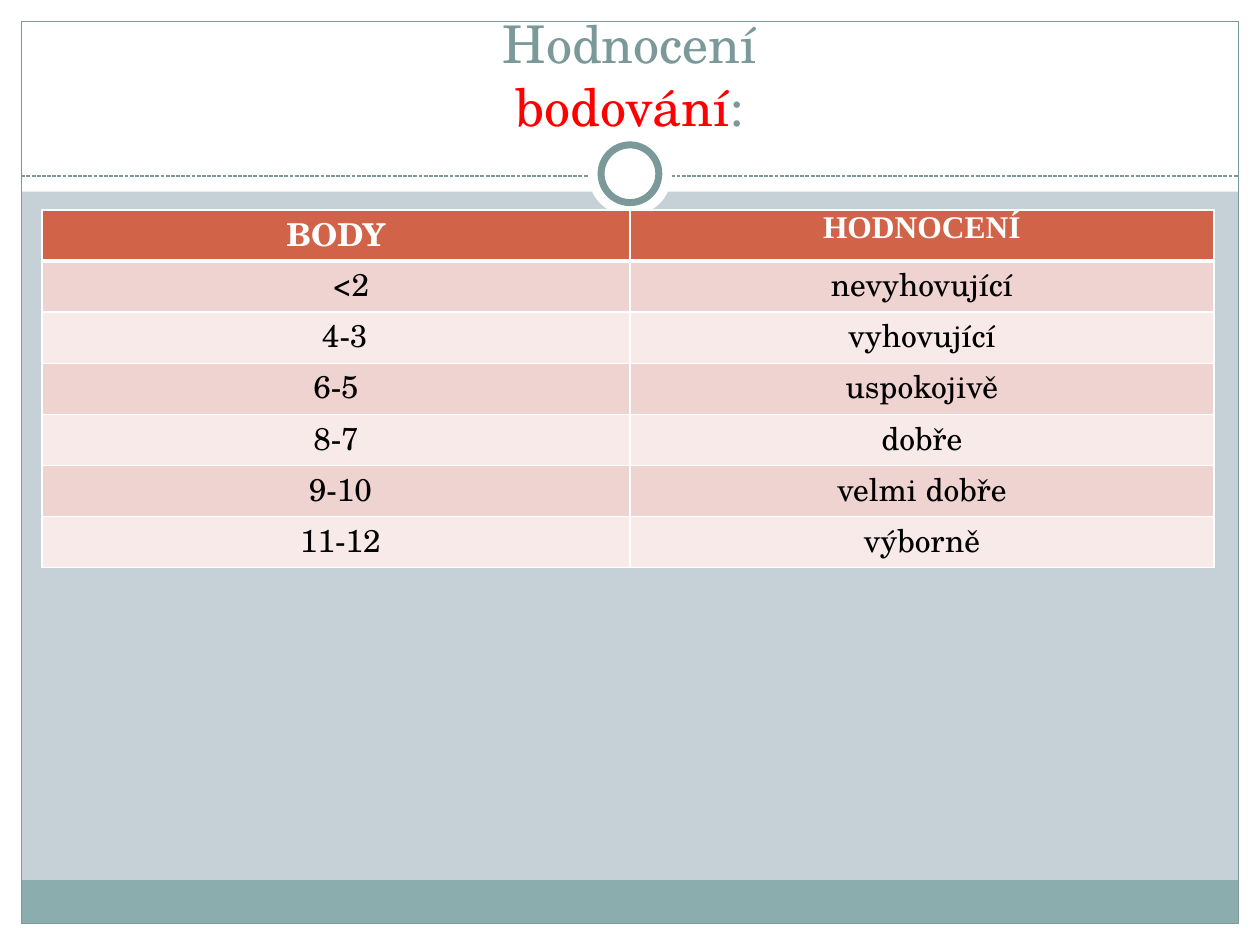
from lxml import etree
from pptx import Presentation, util as u
from pptx.dml.color import RGBColor
from pptx.enum import dml, shapes, text
from pptx.oxml import ns

Pt = u.Pt
WHITE = RGBColor(0xFF, 0xFF, 0xFF)
BLACK = RGBColor(0, 0, 0)
RED = RGBColor(0xFF, 0, 0)
SLATE = RGBColor(0x7C, 0x99, 0x9A)
TEAL = RGBColor(0x8C, 0xAD, 0xAE)
BACKGROUND = RGBColor(0xC5, 0xD1, 0xD7)
HEADER = RGBColor(0xD1, 0x63, 0x49)
BANDS = RGBColor(0xEE, 0xD3, 0xD0), RGBColor(0xF7, 0xEA, 0xE9)

WIDTH, HEIGHT = 720, 540
MARGIN = 12.2
SERIF, TIMES = "TeX Gyre Schola", "Times New Roman"

# Points, grade and extra left indent of the points
GRADES = [
    ("<2", "nevyhovující", 17),
    ("4-3", "vyhovující", 10),
    ("6-5", "uspokojivě", 0),
    ("8-7", "dobře", 0),
    ("9-10", "velmi dobře", 5),
    ("11-12", "výborně", 5),
]


class SlideBuilder:
    def __init__(self, slide):
        self.slide = slide
        background = slide.background.fill
        background.solid()
        background.fore_color.rgb = BACKGROUND

    def shape(self, kind, left, top, width, height, fill=None, line=None, weight=0.75):
        shape = self.slide.shapes.add_shape(
            kind, Pt(left), Pt(top), Pt(width), Pt(height))
        shape.shadow.inherit = False
        if fill is None:
            shape.fill.background()
        else:
            shape.fill.solid()
            shape.fill.fore_color.rgb = fill
        if line is None:
            shape.line.fill.background()
        else:
            shape.line.color.rgb = line
            shape.line.width = Pt(weight)

    def rectangle(self, *box, **style):
        self.shape(shapes.MSO_SHAPE.RECTANGLE, *box, **style)

    def circle(self, center_x, center_y, diameter, **style):
        self.shape(shapes.MSO_SHAPE.OVAL, center_x - diameter / 2,
                   center_y - diameter / 2, diameter, diameter, **style)

    def dashed_line(self, left, right, y):
        line = self.slide.shapes.add_connector(
            shapes.MSO_CONNECTOR.STRAIGHT, Pt(left), Pt(y), Pt(right), Pt(y))
        line.line.color.rgb = SLATE
        line.line.width = Pt(0.75)
        line.line.dash_style = dml.MSO_LINE.SQUARE_DOT
        properties = line.element.find(ns.qn("p:spPr"))
        etree.SubElement(properties, ns.qn("a:effectLst"))

    def title(self, left, top, width, height, lines):
        title = self.slide.shapes.title
        self.slide.shapes.element.append(title.element)  # bring to front
        title.left, title.top = Pt(left), Pt(top)
        title.width, title.height = Pt(width), Pt(height)
        frame = title.text_frame
        frame.word_wrap = True
        frame.auto_size = text.MSO_AUTO_SIZE.NONE
        frame.vertical_anchor = text.MSO_ANCHOR.BOTTOM
        frame.margin_top = frame.margin_bottom = 0
        paragraph = frame.paragraphs[0]
        paragraph.alignment = text.PP_ALIGN.CENTER
        paragraph.line_spacing = Pt(36)
        paragraph.font.size = Pt(29.7)
        paragraph.font.name = SERIF
        for index, line in enumerate(lines):
            if index:
                paragraph.add_line_break()
            for words, color in line:
                run = paragraph.add_run()
                run.text = words
                run.font.color.rgb = color

    def table(self, left, top, columns, row_height, rows):
        table = self.slide.shapes.add_table(
            rows, len(columns), Pt(left), Pt(top),
            Pt(sum(columns)), Pt(row_height * rows)).table
        for column, width in zip(table.columns, columns):
            column.width = Pt(width)
        for row in table.rows:
            row.height = Pt(row_height)
        return table

    def cell(self, cell, words, fill, color=BLACK, font=SERIF, bold=False,
             indent=0, top=1, bottom=1):
        cell.fill.solid()
        cell.fill.fore_color.rgb = fill
        cell.margin_left, cell.margin_right = Pt(5 + indent), Pt(5)
        cell.margin_top = cell.margin_bottom = 0
        cell.text = words
        paragraph = cell.text_frame.paragraphs[0]
        paragraph.alignment = text.PP_ALIGN.CENTER
        paragraph.font.size = Pt(18)
        paragraph.font.name = font
        paragraph.font.bold = bold
        paragraph.font.color.rgb = color
        # White borders come before the fill in the cell properties
        properties = cell.fill._xPr
        borders = ("lnL", 1), ("lnR", 1), ("lnT", top), ("lnB", bottom)
        for index, (side, weight) in enumerate(borders):
            border = etree.Element(ns.qn(f"a:{side}"), w=str(Pt(weight)))
            solid = etree.SubElement(border, ns.qn("a:solidFill"))
            etree.SubElement(solid, ns.qn("a:srgbClr"), val=str(WHITE))
            properties.insert(index, border)


def main():
    presentation = Presentation()
    presentation.slide_width, presentation.slide_height = Pt(WIDTH), Pt(HEIGHT)
    title_only = presentation.slide_layouts[5]
    builder = SlideBuilder(presentation.slides.add_slide(title_only))

    # White frame, footer band and outline
    inner_width, inner_height = WIDTH - 2 * MARGIN, HEIGHT - 2 * MARGIN
    for box in [(0, HEIGHT - MARGIN, WIDTH, MARGIN), (0, 0, WIDTH, 109.5),
                (0, 0, MARGIN, HEIGHT), (WIDTH - MARGIN, 0, MARGIN, HEIGHT)]:
        builder.rectangle(*box, fill=WHITE)
    builder.rectangle(MARGIN, 503, inner_width, 24.5, fill=TEAL)
    builder.rectangle(MARGIN, MARGIN, inner_width, inner_height, line=SLATE)

    # Divider with ring
    builder.dashed_line(MARGIN, WIDTH - MARGIN, 100.6)
    builder.circle(WIDTH / 2, 99.3, 48, fill=WHITE)
    builder.circle(WIDTH / 2, 99.3, 33, fill=WHITE, line=SLATE, weight=4)

    # Title
    builder.title(24, 18, 672, 60, [
        [("Hodnocení", SLATE)],
        [("bodování", RED), (":", SLATE)],
    ])

    # Grading table
    table = builder.table(24, 120, [336, 333.6], 29.2, len(GRADES) + 1)
    for column, (words, font) in enumerate([("BODY", SERIF), ("HODNOCENÍ", TIMES)]):
        builder.cell(table.cell(0, column), words, HEADER, WHITE, font,
                     bold=True, bottom=3)
    for row, (points, grade, indent) in enumerate(GRADES, 1):
        style = {"fill": BANDS[(row - 1) % 2], "top": 3 if row == 1 else 1}
        builder.cell(table.cell(row, 0), points, indent=indent, **style)
        builder.cell(table.cell(row, 1), grade, **style)

    presentation.save("out.pptx")


if __name__ == "__main__":
    main()
